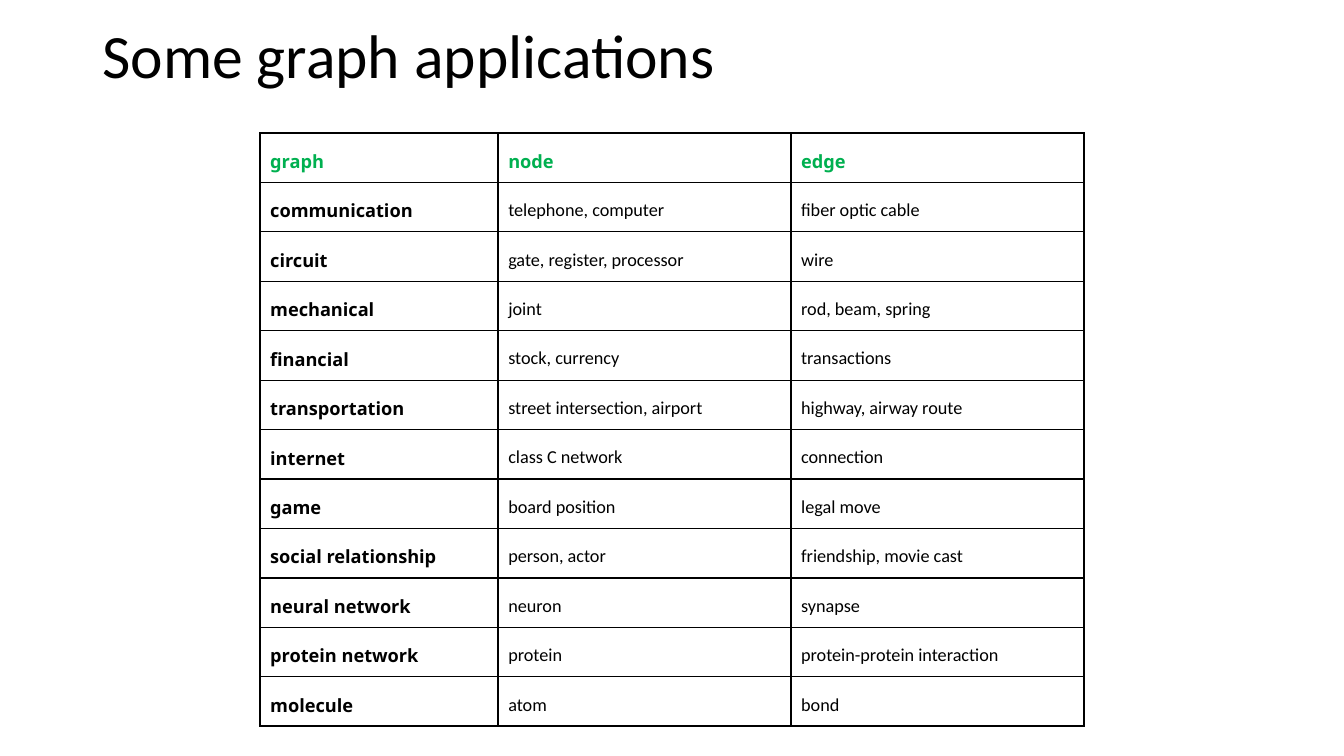
from lxml import etree
from pptx import Presentation
from pptx import util as u
from pptx.dml import color
from pptx.enum import text
from pptx.oxml import ns

COLOURS = {"ink": "000000", "heading": "00B050"}
BODY_FONT = "Calibri"
LABEL_FONT = "Noto Sans"
COLUMN_WIDTHS = (6, 7.38, 7.38)
TABLE_HEIGHT = 14.96
APPLICATIONS = [
    ("graph", "node", "edge"),
    ("communication", "telephone, computer", "fiber optic cable"),
    ("circuit", "gate, register, processor", "wire"),
    ("mechanical", "joint", "rod, beam, spring"),
    ("financial", "stock, currency", "transactions"),
    ("transportation", "street intersection, airport", "highway, airway route"),
    ("internet", "class C network", "connection"),
    ("game", "board position", "legal move"),
    ("social relationship", "person, actor", "friendship, movie cast"),
    ("neural network", "neuron", "synapse"),
    ("protein network", "protein", "protein-protein interaction"),
    ("molecule", "atom", "bond"),
]


def add_run(paragraph, wording, size, font, colour, bold=False):
    run = paragraph.add_run()
    run.text = wording
    run.font.size = u.Pt(size)
    run.font.name = font
    run.font.bold = bold
    run.font.color.rgb = color.RGBColor.from_string(COLOURS[colour])


def add_title(slide, wording):
    title = slide.shapes.title
    title.left, title.top = u.Cm(2.33), u.Cm(0.3)
    title.width, title.height = u.Cm(29.21), u.Cm(2.33)
    title.text_frame.vertical_anchor = text.MSO_ANCHOR.MIDDLE
    title.text_frame.auto_size = text.MSO_AUTO_SIZE.NONE
    heading = title.text_frame.paragraphs[0]
    heading.alignment = text.PP_ALIGN.LEFT
    heading.line_spacing = 0.9
    add_run(heading, wording, 44, BODY_FONT, "ink")


def add_border(cell, side, width):
    properties = cell._tc.get_or_add_tcPr()
    border = etree.SubElement(properties, ns.qn(f"a:{side}"), w=str(u.Pt(width)))
    fill = etree.SubElement(border, ns.qn("a:solidFill"))
    etree.SubElement(fill, ns.qn("a:srgbClr"), val=COLOURS["ink"])


def fill_cell(cell, wording, is_heading, is_label, is_last):
    widths = {
        "lnL": 1.5,
        "lnR": 1.5,
        "lnT": 1.5 if is_heading else 1,
        "lnB": 1.5 if is_last else 1,
    }
    for side, width in widths.items():
        add_border(cell, side, width)
    cell.fill.background()
    cell.vertical_anchor = text.MSO_ANCHOR.MIDDLE
    cell.margin_left = cell.margin_right = u.Cm(0.1)
    cell.margin_top = cell.margin_bottom = u.Cm(0.1)
    entry = cell.text_frame.paragraphs[0]
    entry._p.get_or_add_pPr().set("marL", str(u.Cm(0.15)))
    entry.line_spacing = 1.3
    bold = is_heading or is_label
    add_run(entry, wording, 13, LABEL_FONT if bold else BODY_FONT,
            "heading" if is_heading else "ink", bold)


def add_applications(slide, rows):
    frame = slide.shapes.add_table(
        len(rows), len(COLUMN_WIDTHS), u.Cm(6.56), u.Cm(3.35),
        u.Cm(sum(COLUMN_WIDTHS)), u.Cm(TABLE_HEIGHT))
    applications = frame.table
    applications.first_row = applications.horz_banding = False
    for column, width in zip(applications.columns, COLUMN_WIDTHS):
        column.width = u.Cm(width)
    for r, row in enumerate(rows):
        for c, wording in enumerate(row):
            fill_cell(applications.cell(r, c), wording,
                      r == 0, c == 0, r == len(rows) - 1)


def main():
    deck = Presentation()
    deck.slide_width, deck.slide_height = u.Cm(33.87), u.Cm(19.05)
    slide = deck.slides.add_slide(deck.slide_layouts[5])
    add_title(slide, "Some graph applications")
    add_applications(slide, APPLICATIONS)
    deck.save("out.pptx")


if __name__ == "__main__":
    main()
